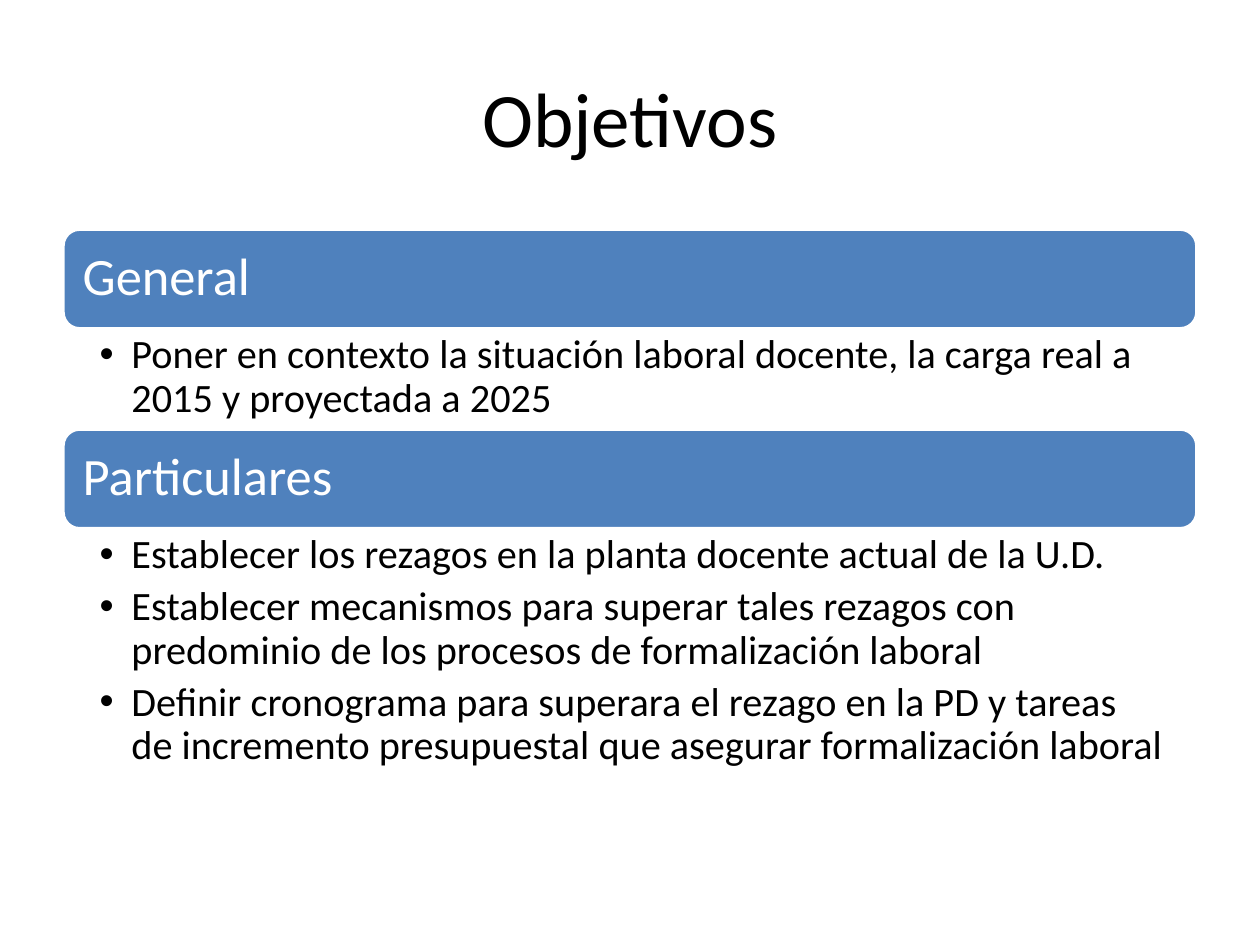
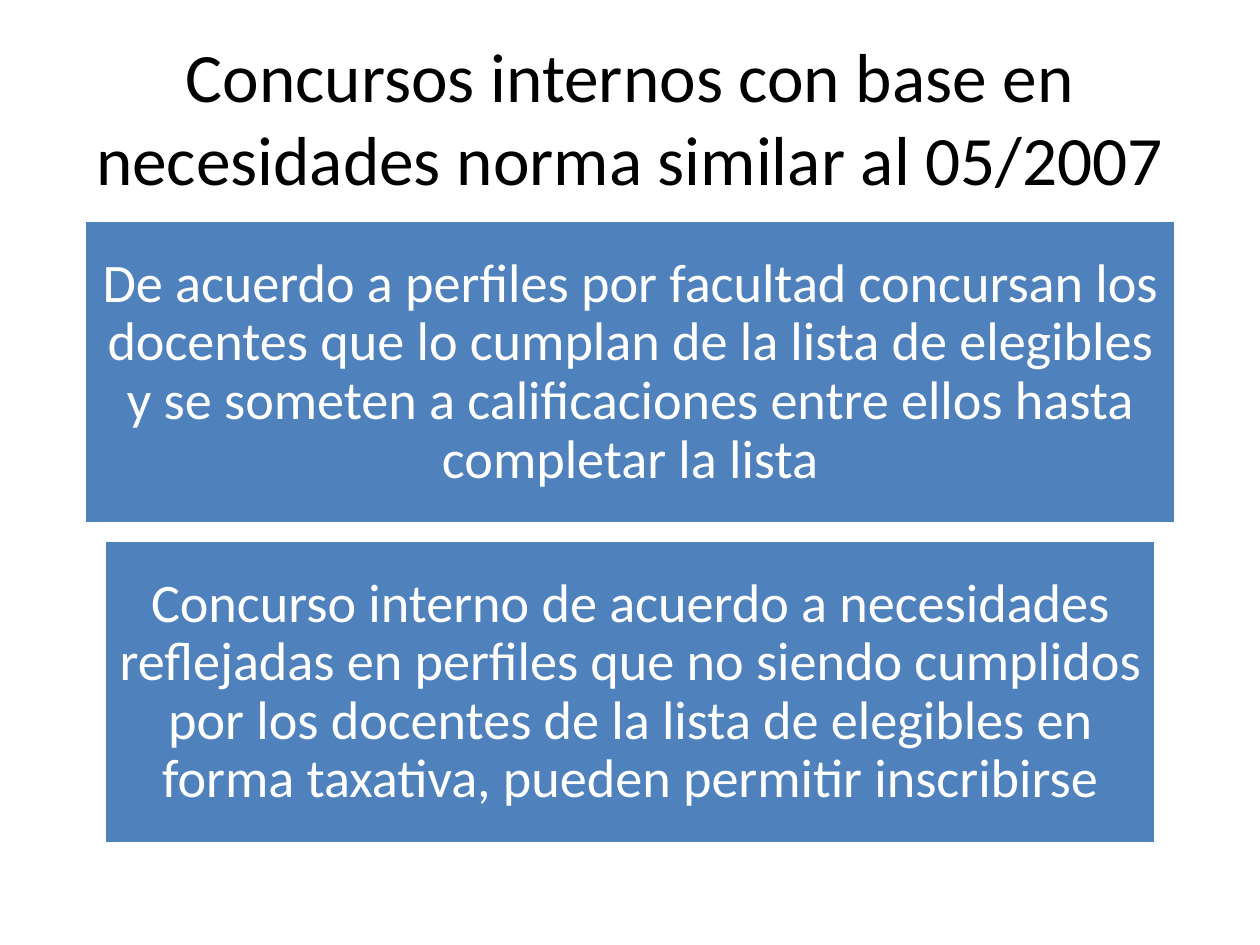
from pptx import Presentation
from pptx.dml.color import RGBColor
from pptx.enum.shapes import MSO_SHAPE as Shape
from pptx.enum.text import MSO_ANCHOR as Anchor, PP_ALIGN as Align
from pptx.oxml.ns import qn
from pptx.util import Cm, Pt
from lxml.etree import SubElement

BLUE = RGBColor(0x4F, 0x81, 0xBD)
WHITE = RGBColor(0xFF, 0xFF, 0xFF)
BLACK = RGBColor(0x00, 0x00, 0x00)
FONT = "Calibri"
SLIDE_WIDTH = 25.4
MARGIN = 1.27
CONTENT_WIDTH = SLIDE_WIDTH - 2 * MARGIN


def write(shape, texts, size, color, align, anchor, insets, spacing=0.9, bullets=False):
    """Fill a shape with one paragraph per text; insets are left, top, right, bottom."""
    frame = shape.text_frame
    frame.word_wrap = True
    frame.vertical_anchor = anchor
    (frame.margin_left, frame.margin_top,
     frame.margin_right, frame.margin_bottom) = [Cm(inset) for inset in insets]
    for index, text in enumerate(texts):
        paragraph = frame.paragraphs[0] if index == 0 else frame.add_paragraph()
        paragraph.alignment = align
        paragraph.line_spacing = spacing
        if bullets:
            paragraph.space_after = Pt(5)
            properties = paragraph._p.get_or_add_pPr()
            properties.set("marL", str(Cm(0.64)))
            properties.set("indent", str(Cm(-0.64)))
            SubElement(properties, qn("a:buFont"), typeface="Arial")
            SubElement(properties, qn("a:buChar"), char="•")
        run = paragraph.add_run()
        run.text = text
        run.font.name = FONT
        run.font.size = Pt(size)
        run.font.color.rgb = color


def add_panel(slide, kind, left, top, width, height):
    """Add a blue panel with a white outline."""
    panel = slide.shapes.add_shape(kind, Cm(left), Cm(top), Cm(width), Cm(height))
    panel.shadow.inherit = False
    panel.fill.solid()
    panel.fill.fore_color.rgb = BLUE
    panel.line.color.rgb = WHITE
    panel.line.width = Pt(2)
    return panel


presentation = Presentation()
presentation.slide_width = Cm(SLIDE_WIDTH)
presentation.slide_height = Cm(19.05)

# Slides and their titles
slides = []
for title, size in [
    ("Objetivos", 44),
    ("Concursos internos con base en necesidades norma similar al 05/2007", 39.6),
]:
    slide = presentation.slides.add_slide(presentation.slide_layouts[6])
    title_box = slide.shapes.add_textbox(Cm(MARGIN), Cm(0.76), Cm(CONTENT_WIDTH), Cm(3.18))
    write(title_box, [title], size, BLACK, Align.CENTER, Anchor.MIDDLE,
          (0.25, 0.13, 0.25, 0.13), spacing=1.0)
    slides.append(slide)
objectives_slide, contests_slide = slides

# Objectives: each heading band is followed by its list
BAND_HEIGHT = 2.01
top = 4.62
for heading, objectives, list_height in [
    ("General",
     ["Poner en contexto la situación laboral docente, la carga real a 2015 y proyectada a 2025"],
     2.02),
    ("Particulares",
     ["Establecer los rezagos en la planta docente actual de la U.D.",
      "Establecer mecanismos para superar tales rezagos con predominio de los procesos "
      "de formalización laboral",
      "Definir cronograma para superara el rezago en la PD y tareas de incremento "
      "presupuestal que asegurar formalización laboral"],
     6.2),
]:
    band = add_panel(objectives_slide, Shape.ROUNDED_RECTANGLE,
                     MARGIN, top, CONTENT_WIDTH, BAND_HEIGHT)
    write(band, [heading], 30, WHITE, Align.LEFT, Anchor.MIDDLE, (0.3, 0.3, 0.3, 0.3))
    top += BAND_HEIGHT
    objective_list = objectives_slide.shapes.add_textbox(
        Cm(MARGIN), Cm(top), Cm(CONTENT_WIDTH), Cm(list_height))
    write(objective_list, objectives, 23, BLACK, Align.LEFT, Anchor.TOP,
          (0.74, 0.1, 0.58, 0.1), bullets=True)
    top += list_height

# Contests: centred panels, one under the other
PANEL_HEIGHT = 6.12
PANEL_GAP = 0.33
for row, (width, text) in enumerate([
    (22.0, "De acuerdo a perfiles por facultad concursan los docentes que lo cumplan de la "
           "lista de elegibles y se someten a calificaciones entre ellos hasta completar la lista"),
    (21.2, "Concurso interno de acuerdo a necesidades reflejadas en perfiles que no siendo "
           "cumplidos por los docentes de la lista de elegibles en forma taxativa, pueden "
           "permitir inscribirse"),
]):
    panel = add_panel(contests_slide, Shape.RECTANGLE, (SLIDE_WIDTH - width) / 2,
                      4.45 + row * (PANEL_HEIGHT + PANEL_GAP), width, PANEL_HEIGHT)
    write(panel, [text], 31, WHITE, Align.CENTER, Anchor.MIDDLE, (0.23, 0.23, 0.23, 0.23))

presentation.save("out.pptx")
